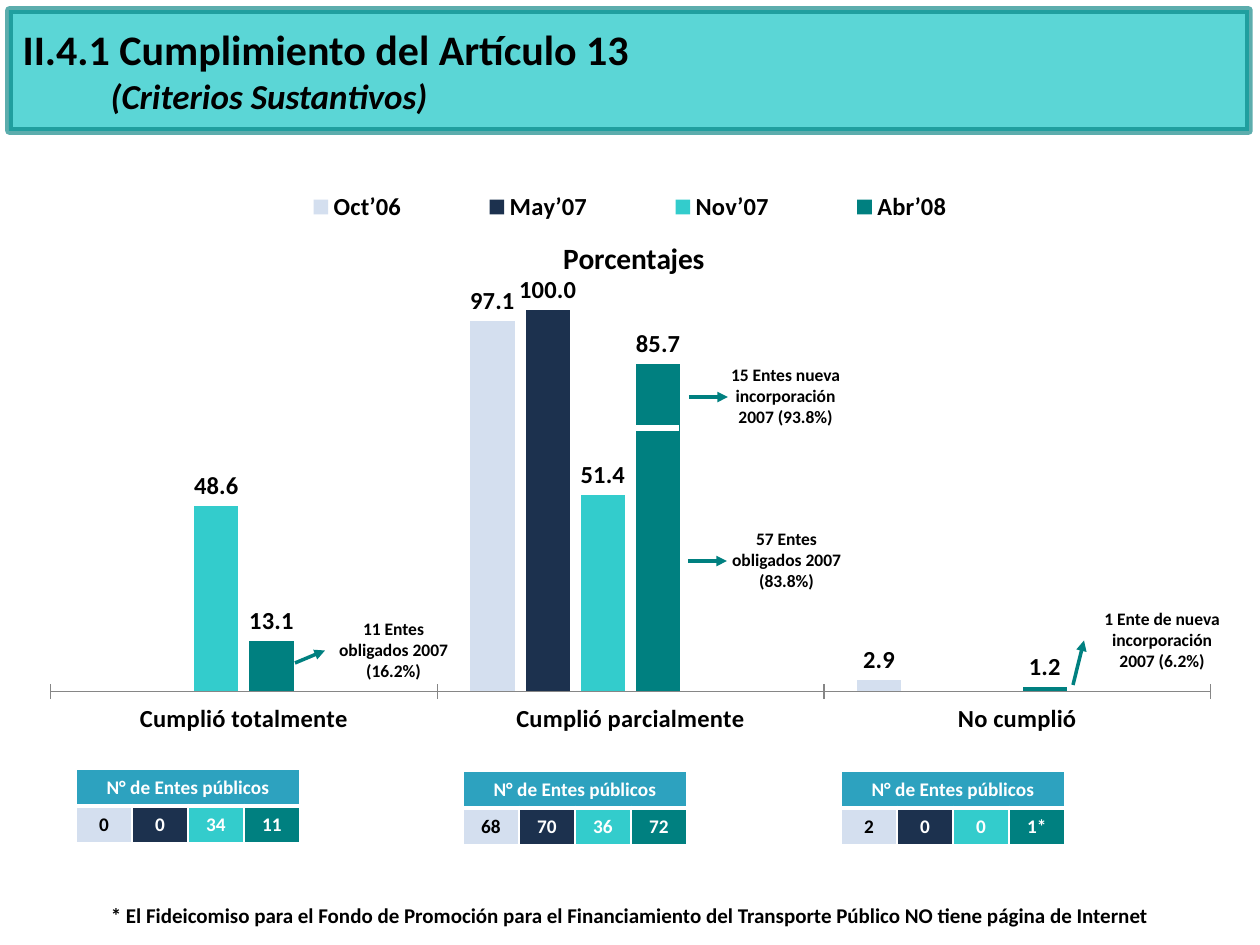
import pptx
import pptx.chart.data
import pptx.dml.color
import pptx.enum.chart
import pptx.enum.shapes
import pptx.enum.text
import pptx.oxml
import pptx.util
from lxml import etree

PX = 914400 / 126
NS = 'xmlns:a="http://schemas.openxmlformats.org/drawingml/2006/main"'
NS_C = 'xmlns:c="http://schemas.openxmlformats.org/drawingml/2006/chart"'
PERIOD_COLORS = ["D4DFEF", "1C314E", "33CCCC", "008080"]
rgb = pptx.dml.color.RGBColor.from_string
CENTER = pptx.enum.text.PP_ALIGN.CENTER
MIDDLE = pptx.enum.text.MSO_ANCHOR.MIDDLE


def box(*lengths):
    return [round(length * PX) for length in lengths]


def style(font, size, color="000000", **extra):
    values = {"name": "Calibri", "size": pptx.util.Pt(size), "bold": True, **extra}
    for attribute, value in values.items():
        setattr(font, attribute, value)
    font.color.rgb = rgb(color)


prs = pptx.Presentation()
prs.slide_width, prs.slide_height = box(1260, 945)
slide = prs.slides.add_slide(prs.slide_layouts[5])
shapes = slide.shapes

# Heading band, placed behind the title
band = shapes.add_shape(pptx.enum.shapes.MSO_SHAPE.RECTANGLE, *box(9, 10, 1240, 121))
band.shadow.inherit = False
band.fill.solid()
band.fill.fore_color.rgb = rgb("33CCCC")
band.line.color.rgb = rgb("008080")
band.line.width = pptx.util.Pt(4.33)
for color, alpha in zip(band._element.spPr.iter("{*}srgbClr"), (80000, 64000)):
    color.append(pptx.oxml.parse_xml(f'<a:alpha {NS} val="{alpha}"/>'))
shapes._spTree.insert(2, band._element)

# Title
title = shapes.title
title.left, title.top, title.width, title.height = box(10, 11, 1155, 118)
heading = title.text_frame
heading.text = "II.4.1 Cumplimiento del Artículo 13\n(Criterios Sustantivos)"
heading.vertical_anchor = MIDDLE
heading.auto_size = pptx.enum.text.MSO_AUTO_SIZE.NONE
for paragraph, size, italic in zip(heading.paragraphs, (24, 20), (False, True)):
    paragraph.alignment = pptx.enum.text.PP_ALIGN.LEFT
    style(paragraph.runs[0].font, size, italic=italic)
heading.paragraphs[1]._p.get_or_add_pPr().set("marL", str(box(88)[0]))

# Tables with the number of public bodies per period
counts = [
    (76, 769, ["0", "0", "34", "11"]),
    (463, 771, ["68", "70", "36", "72"]),
    (841, 771, ["2", "0", "0", "1*"]),
]
for left, top, numbers in counts:
    table = shapes.add_table(2, 4, *box(left, top, 224, 74)).table
    for row, texts, fills in zip(
        range(2),
        (["N° de Entes públicos", "", "", ""], numbers),
        (["2DA2BF"] * 4, PERIOD_COLORS),
    ):
        for column, (text, fill) in enumerate(zip(texts, fills)):
            cell = table.cell(row, column)
            tc_pr = cell._tc.get_or_add_tcPr()
            widths = {"L": 1, "R": 1, "T": 3 if row else 1, "B": 1 if row else 3}
            for side, width in widths.items():
                tc_pr.append(pptx.oxml.parse_xml(
                    f'<a:ln{side} {NS} w="{width * 12700}"><a:solidFill>'
                    f'<a:srgbClr val="FFFFFF"/></a:solidFill></a:ln{side}>'))
            cell.fill.solid()
            cell.fill.fore_color.rgb = rgb(fill)
            cell.vertical_anchor = MIDDLE
            cell.text = text
            paragraph = cell.text_frame.paragraphs[0]
            paragraph.alignment = CENTER
            style(paragraph.font, 11)
            for run in paragraph.runs:
                style(run.font, 11, "000000" if fill == "D4DFEF" else "FFFFFF")
    table.cell(0, 0).merge(table.cell(0, 3))

# Chart; two empty series keep the room to the right of each group
data = pptx.chart.data.CategoryChartData(number_format="0.0")
data.categories = ["Cumplió totalmente", "Cumplió parcialmente", "No cumplió"]
for name, values in {
    "Oct’06": (None, 97.1, 2.9),
    "May’07": (None, 100, None),
    "Nov’07": (48.6, 51.4, None),
    "Abr’08": (13.1, 85.7, 1.2),
    "Series 5": (None, None, None),
    "Series 6": (None, None, None),
}.items():
    data.add_series(name, values)
chart = shapes.add_chart(pptx.enum.chart.XL_CHART_TYPE.COLUMN_CLUSTERED,
                         *box(29, 175, 1202, 581), data).chart
style(chart.font, 14)
chart.has_title = True
chart.chart_title.text_frame.text = "Porcentajes"
style(chart.chart_title.text_frame.paragraphs[0].runs[0].font, 16.8)

plot = chart.plots[0]
plot.gap_width, plot.overlap, plot.vary_by_categories = 150, -25, False
for series, color in zip(plot.series, PERIOD_COLORS + ["474B78", "7D3C4A"]):
    series.format.fill.solid()
    series.format.fill.fore_color.rgb = rgb(color)
    series.invert_if_negative = False
    labels = series.data_labels
    labels.show_value = True
    labels.number_format, labels.number_format_is_linked = "0.0", False
    labels.position = pptx.enum.chart.XL_LABEL_POSITION.OUTSIDE_END

value_axis, category_axis = chart.value_axis, chart.category_axis
value_axis.minimum_scale, value_axis.maximum_scale = 0, 100
value_axis.has_major_gridlines = False
value_axis.visible = False
category_axis.major_tick_mark = pptx.enum.chart.XL_TICK_MARK.CROSS
category_axis.format.line.color.rgb = rgb("868686")

chart.has_legend = True
legend = chart.legend
legend.position = pptx.enum.chart.XL_LEGEND_POSITION.TOP
legend.include_in_layout = False
style(legend.font, 14)
for index in (5, 4):
    legend._element.find("{*}legendPos").addnext(pptx.oxml.parse_xml(
        f'<c:legendEntry {NS_C}><c:idx val="{index}"/><c:delete val="1"/></c:legendEntry>'))

# Fixed places inside the chart, as shares of its size
plot_area = chart._chartSpace.chart.plotArea
for parent, after, target, places in (
    (chart.chart_title._element, "tx", "", {"x": 0.44, "y": 0.1}),
    (plot_area, None, "inner", {"x": 0.018, "y": 0.232, "w": 0.965, "h": 0.657}),
    (legend._element, "legendEntry", "", {"x": 0.17, "y": 0.02, "w": 0.66, "h": 0.07}),
):
    for old in parent.findall("{*}layout"):
        parent.remove(old)
    layout = pptx.oxml.parse_xml(f"<c:layout {NS_C}><c:manualLayout/></c:layout>")
    settings = {"layoutTarget": target} if target else {}
    settings.update({f"{key}Mode": "edge" for key in "xy"})
    settings.update(places)
    for tag, value in settings.items():
        etree.SubElement(layout[0], layout.tag.replace("layout", tag)).set("val", str(value))
    if after:
        parent.findall("{*}" + after)[-1].addnext(layout)
    else:
        parent.insert(0, layout)

# Callouts and footnote
notes = [
    ("11 Entes obligados 2007 (16.2%)", (325, 612, 137, 77), 10),
    ("57 Entes obligados 2007 (83.8%)", (718, 522, 137, 77), 10),
    ("15 Entes nueva incorporación 2007 (93.8%)", (717, 358, 137, 77), 10),
    ("1 Ente de nueva incorporación 2007 (6.2%)", (1084, 602, 156, 77), 10),
    ("* El Fideicomiso para el Fondo de Promoción para el Financiamiento del "
     "Transporte Público NO tiene página de Internet", (39, 896, 1182, 38), 12),
]
note_boxes = []
for text, place, size in notes:
    note = shapes.add_textbox(*box(*place))
    note.text_frame.word_wrap = True
    note.text_frame.auto_size = pptx.enum.text.MSO_AUTO_SIZE.SHAPE_TO_FIT_TEXT
    note.text_frame.text = text
    paragraph = note.text_frame.paragraphs[0]
    paragraph.alignment = CENTER
    style(paragraph.runs[0].font, size)
    note_boxes.append(note)

# White cut across the tallest green bar, and arrows to the callouts
lines = [
    ((630, 428, 679, 428), "FFFFFF", 3, None),
    ((295, 663, 325, 651), "008080", 2, note_boxes[0]),
    ((689, 397, 728, 397), "008080", 2, None),
    ((688, 561, 727, 561), "008080", 2, None),
    ((1073, 685, 1084, 641), "008080", 2, note_boxes[3]),
]
for ends, color, width, callout in lines:
    line = shapes.add_connector(pptx.enum.shapes.MSO_CONNECTOR.STRAIGHT, *box(*ends))
    line.line.color.rgb = rgb(color)
    line.line.width = pptx.util.Pt(width)
    if color != "FFFFFF":
        line.line._get_or_add_ln().append(
            pptx.oxml.parse_xml(f'<a:tailEnd {NS} type="triangle"/>'))
    line._element.spPr.append(pptx.oxml.parse_xml(f"<a:effectLst {NS}/>"))
    if callout:
        line.end_connect(callout, 1)

prs.save("out.pptx")
